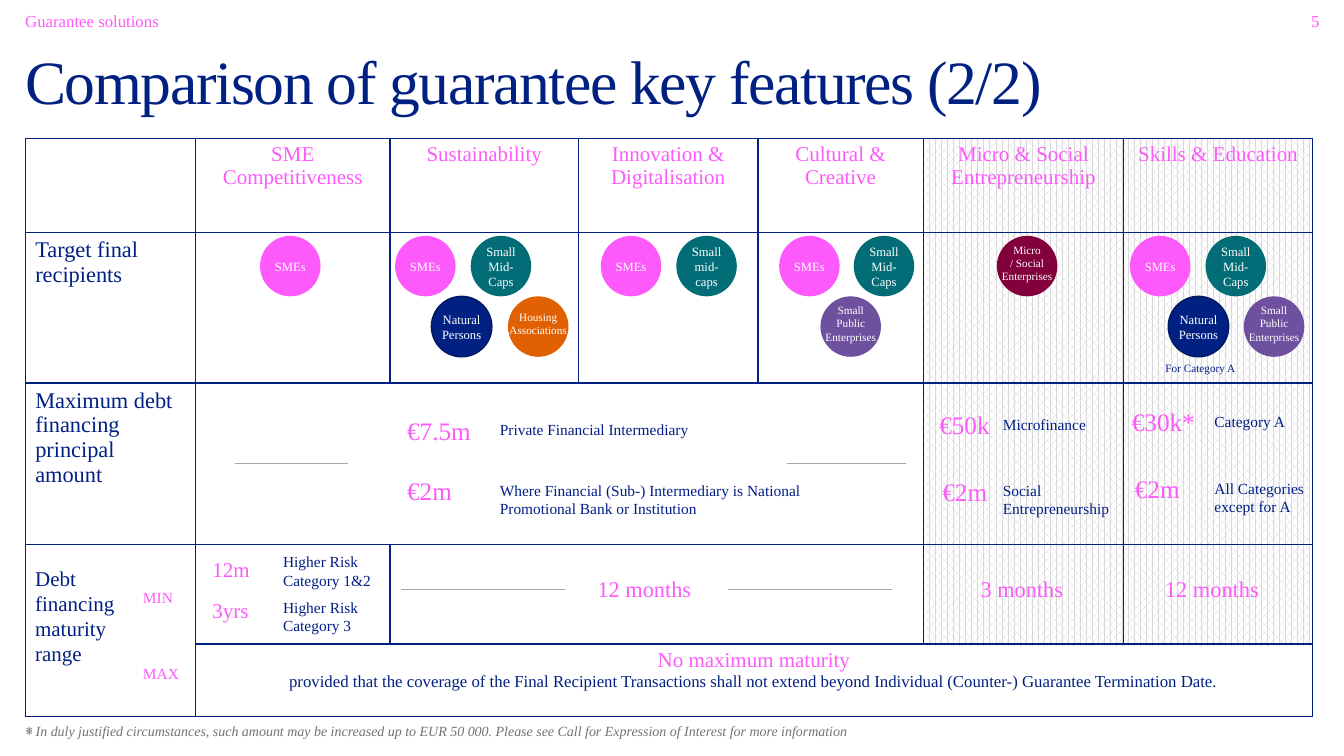
from dataclasses import dataclass

import pptx
import pptx.dml.color
import pptx.enum.dml
import pptx.enum.shapes
import pptx.enum.text
import pptx.oxml.ns
import pptx.util
from lxml import etree

SHAPE = pptx.enum.shapes.MSO_SHAPE
ALIGN = pptx.enum.text.PP_ALIGN
ANCHOR = pptx.enum.text.MSO_ANCHOR
qn = pptx.oxml.ns.qn


@dataclass(frozen=True)
class Theme:
    font: str = "Times New Roman"
    title: str = "002182"
    navy: str = "002082"
    note: str = "001E85"
    edge: str = "001860"
    pink: str = "FE59FB"
    section: str = "FF5AFB"
    page: str = "FF59FF"
    teal: str = "036D77"
    orange: str = "E16002"
    purple: str = "6E509F"
    wine: str = "82003C"
    grey: str = "767171"
    rule: str = "A6A6A6"
    hatch: str = "D9D9D9"
    white: str = "FFFFFF"
    title_size: int = 44
    amount_size: int = 18
    row_size: int = 16
    head_size: int = 15
    text_size: int = 12
    note_size: int = 11
    foot_size: int = 10
    bubble_size: int = 9
    small_size: int = 8


def rgb(colour):
    return pptx.dml.color.RGBColor.from_string(colour)


class FeatureSlide:
    """Draws on a grid of 160 columns by 90 rows."""

    def __init__(self, presentation, theme):
        self.theme = theme
        self.column = presentation.slide_width / 160
        self.row = presentation.slide_height / 90
        self.slide = presentation.slides.add_slide(presentation.slide_layouts[4])

    def box(self, left, top, width, height):
        return (round(left * self.column), round(top * self.row),
                round(width * self.column), round(height * self.row))

    def add_text(self, frame, text, size, colour, align=ALIGN.LEFT, spacing=None, tracking=None, italic=False):
        """Add one paragraph per line of text, after any text already there."""
        for line in text.split("\n"):
            paragraph = frame.paragraphs[0] if not frame.text else frame.add_paragraph()
            paragraph.alignment = align
            paragraph.space_before = pptx.util.Pt(0)
            if spacing:
                paragraph.line_spacing = spacing
            run = paragraph.add_run()
            run.text = line
            run.font.name = self.theme.font
            run.font.size = pptx.util.Pt(size)
            run.font.color.rgb = rgb(colour)
            run.font.bold = False
            run.font.italic = italic
            if tracking:
                run.font._element.set("spc", str(tracking))

    def placeholder(self, index, box, text, size, colour, spacing, **style):
        shape = self.slide.placeholders[index]
        shape.left, shape.top, shape.width, shape.height = self.box(*box)
        frame = shape.text_frame
        frame.margin_left = frame.margin_right = frame.margin_top = frame.margin_bottom = 0
        frame.auto_size = pptx.enum.text.MSO_AUTO_SIZE.NONE
        frame.vertical_anchor = ANCHOR.TOP
        frame.word_wrap = True
        properties = frame.paragraphs[0]._p.get_or_add_pPr()
        properties.set("marL", "0")
        properties.set("indent", "0")
        etree.SubElement(properties, qn("a:buNone"))
        self.add_text(frame, text, size, colour, spacing=spacing, **style)

    def label(self, text, left, top, width, size, colour, lines=1, align=ALIGN.LEFT, shapes=None,
              anchor=ANCHOR.TOP):
        height = 1.2 + lines * size * 0.2
        shape = (shapes or self.slide.shapes).add_textbox(*self.box(left, top, width, height))
        shape.text_frame.word_wrap = True
        shape.text_frame.vertical_anchor = anchor
        self.add_text(shape.text_frame, text, size, colour, align)

    def page_number(self, number):
        shape = self.slide.shapes.add_textbox(*self.box(151.56, 1.32, 5.52, 2.64))
        frame = shape.text_frame
        frame.word_wrap = True
        frame.margin_left = frame.margin_right = frame.margin_top = frame.margin_bottom = 0
        self.add_text(frame, number, self.theme.text_size, self.theme.page, ALIGN.RIGHT, tracking=50)

    def hatching(self, *box):
        shape = self.slide.shapes.add_shape(SHAPE.RECTANGLE, *self.box(*box))
        shape.shadow.inherit = False
        shape.line.fill.background()
        shape.fill.patterned()
        shape.fill.pattern = pptx.enum.dml.MSO_PATTERN.PERCENT_60
        shape.fill.fore_color.rgb = rgb(self.theme.hatch)
        shape.fill.back_color.rgb = rgb(self.theme.white)

    def bubble(self, left, top, text, colour, size, lines, width=7.2, edge=None):
        diameter = 7.2
        group = self.slide.shapes.add_group_shape()
        circle = group.shapes.add_shape(SHAPE.OVAL, *self.box(left, top, diameter, diameter))
        circle.shadow.inherit = False
        circle.fill.solid()
        circle.fill.fore_color.rgb = rgb(colour)
        if edge:
            circle.line.color.rgb = rgb(edge)
            circle.line.width = pptx.util.Pt(1)
        else:
            circle.line.fill.background()
        rise = 0.36 if size == self.theme.small_size else 0
        label_top = top + (diameter - 1.2 - lines * size * 0.2) / 2 - rise
        self.label(text, left + (diameter - width) / 2, label_top, width, size, self.theme.white,
                   lines, ALIGN.CENTER, group.shapes, ANCHOR.MIDDLE)

    def rule(self, start, end, level):
        x, y, length, _ = self.box(start, level, end - start, 0)
        line = self.slide.shapes.add_connector(pptx.enum.shapes.MSO_CONNECTOR.STRAIGHT, x, y, x + length, y)
        line.line.color.rgb = rgb(self.theme.rule)
        line.line.width = pptx.util.Pt(0.5)
        etree.SubElement(line._element.spPr, qn("a:effectLst"))

    def table(self, left, top, widths, heights, merges):
        shape = self.slide.shapes.add_table(
            len(heights), len(widths), *self.box(left, top, sum(widths), sum(heights)))
        table = shape.table
        table.first_row = table.horz_banding = False
        for column, width in zip(table.columns, widths):
            column.width = round(width * self.column)
        for row, height in zip(table.rows, heights):
            row.height = round(height * self.row)
        for cell in table.iter_cells():
            cell.fill.background()
            properties = cell._tc.get_or_add_tcPr()
            for position, side in enumerate(("lnL", "lnR", "lnT", "lnB")):
                border = etree.Element(qn(f"a:{side}"), w="12700")
                fill = etree.SubElement(border, qn("a:solidFill"))
                etree.SubElement(fill, qn("a:srgbClr"), val=self.theme.navy)
                properties.insert(position, border)
        for first, last in merges:
            table.cell(*first).merge(table.cell(*last))
        return table


def main():
    presentation = pptx.Presentation()
    presentation.slide_width = pptx.util.Inches(13.33)
    presentation.slide_height = pptx.util.Inches(7.5)
    theme = Theme()
    page = FeatureSlide(presentation, theme)

    page.page_number("5")
    page.hatching(109.92, 16.44, 46.08, 60.48)
    page.placeholder(1, (3, 1.56, 91.2, 2.64), "Guarantee solutions", theme.text_size, theme.section, 0.9)
    page.placeholder(0, (3, 6.84, 145.44, 6.6), "Comparison of guarantee key features (2/2)",
                     theme.title_size, theme.title, 0.8, tracking=-100)
    page.placeholder(2, (3, 86.76, 154.08, 1.8), "*", theme.foot_size, theme.grey, 0.8, italic=True)
    page.placeholder(3, (3, 86.28, 154.08, 3.24),
                     "* In duly justified circumstances, such amount may be increased up to EUR 50 000. "
                     "Please see Call for Expression of Interest for more information",
                     theme.foot_size, theme.grey, 0.9, italic=True)
    unused = page.slide.placeholders[4]._element
    unused.getparent().remove(unused)

    table = page.table(3, 16.44, (20.28, 23.16, 22.44, 21.36, 19.68, 23.88, 22.44),
                       (11.28, 17.88, 19.2, 11.88, 8.64),
                       [((2, 1), (2, 4)), ((3, 0), (4, 0)), ((3, 2), (3, 4)), ((4, 1), (4, 6))])
    products = ("SME Competitiveness", "Sustainability", "Innovation & Digitalisation", "Cultural & Creative",
                "Micro & Social Entrepreneurship", "Skills & Education")
    for index, product in enumerate(products, 1):
        page.add_text(table.cell(0, index).text_frame, product, theme.head_size, theme.pink, ALIGN.CENTER)
    for index, feature in enumerate(("Target final recipients", "Maximum debt financing principal amount"), 1):
        page.add_text(table.cell(index, 0).text_frame, feature, theme.row_size, theme.navy)
    maturity = table.cell(4, 1).text_frame
    page.add_text(maturity, "No maximum maturity", theme.head_size, theme.pink, ALIGN.CENTER)
    page.add_text(maturity, "provided that the coverage of the Final Recipient Transactions shall not extend beyond "
                  "Individual (Counter-) Guarantee Termination Date.", theme.text_size, theme.navy, ALIGN.CENTER)

    smes = ("SMEs", theme.pink, theme.bubble_size, 1)
    mid_caps = ("Small Mid-Caps", theme.teal, theme.bubble_size, 3)
    mid_caps_lower = ("Small mid-caps",) + mid_caps[1:]
    persons = ("Natural Persons", theme.navy, theme.bubble_size, 2, 9.12, theme.edge)
    housing = ("Housing Associations", theme.orange, theme.small_size, 2, 9.48)
    public = ("Small Public Enterprises", theme.purple, theme.small_size, 3, 8.52)
    micro = ("Micro\n/ Social Enterprises", theme.wine, theme.small_size, 3, 8.64)
    upper = ((30.96, smes), (47.04, smes), (56.04, mid_caps), (71.52, smes), (80.52, mid_caps_lower),
             (92.76, smes), (101.64, mid_caps), (118.68, micro), (134.52, smes), (143.52, mid_caps))
    lower = ((51.36, persons), (60.48, housing), (97.68, public), (139.08, persons), (148.08, public))
    for top, recipients in ((28.08, upper), (35.28, lower)):
        for left, recipient in recipients:
            page.bubble(left, top, *recipient)
    page.label("For Category A", 135.96, 42.48, 13.92, theme.small_size, theme.note, align=ALIGN.CENTER)

    amounts = (
        ("€7.5m", 47.28, 48.84), ("€2m", 47.28, 56.04), ("€50k", 110.64, 48.12),
        ("€2m", 111, 56.16), ("€30k*", 133.56, 47.76), ("€2m", 133.92, 55.8))
    for text, left, top in amounts:
        page.label(text, left, top, 13.56, theme.amount_size, theme.pink)
    notes = (
        ("Private Financial Intermediary", 58.32, 49.44, 34.2, 1),
        ("Where Financial (Sub-) Intermediary is National Promotional Bank or Institution", 58.32, 56.64, 41.04, 2),
        ("Microfinance", 118.2, 48.84, 15.84, 1), ("Social\nEntrepreneurship", 118.2, 56.64, 15.84, 2),
        ("Category A", 143.4, 48.48, 15.84, 1), ("All Categories except for A", 143.4, 56.4, 15.84, 2),
        ("Higher Risk Category 1&2", 32.52, 65.16, 13.44, 2), ("Higher Risk Category 3", 32.52, 70.56, 11.64, 2))
    for text, left, top, width, lines in notes:
        page.label(text, left, top, width, theme.note_size, theme.note, lines)

    page.label("Debt financing maturity range", 3, 66.72, 14.88, theme.head_size, theme.navy, 5)
    for text, top in (("MIN", 69.48), ("MAX", 78.48)):
        page.label(text, 15.84, top, 8.04, theme.note_size, theme.pink)
    for text, top in (("12m", 65.64), ("3yrs", 70.56)):
        page.label(text, 24.12, top, 8.4, theme.head_size, theme.pink)
    for text, left in (("12 months", 69.96), ("3 months", 115.56), ("12 months", 137.52)):
        page.label(text, left, 67.9, 16, theme.row_size, theme.pink)
    for start, end, level in ((27.96, 41.4, 55.2), (93.72, 107.88, 55.2), (47.76, 67.32, 70.2), (86.64, 106.2, 70.2)):
        page.rule(start, end, level)

    presentation.save("out.pptx")


if __name__ == "__main__":
    main()
